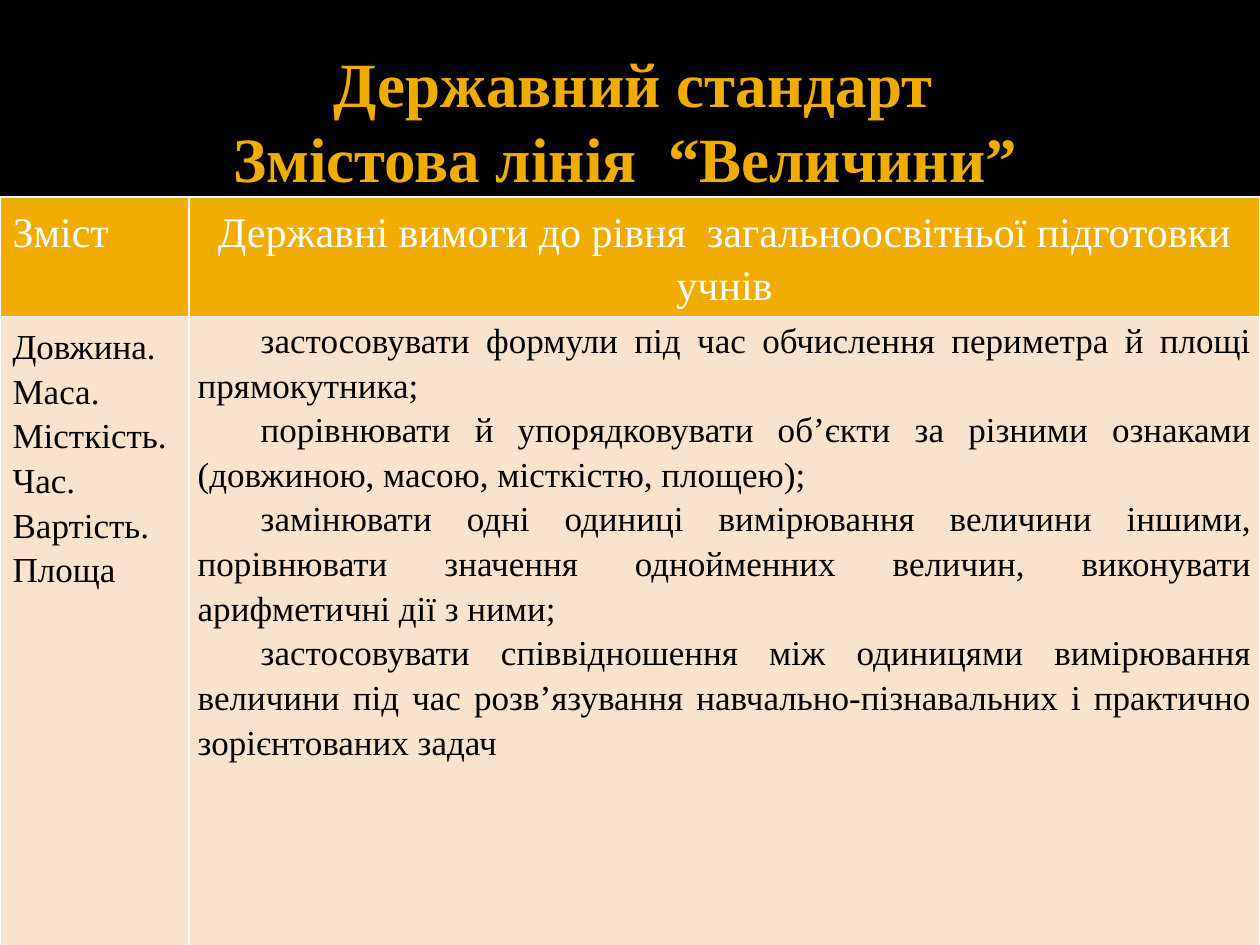
from lxml.etree import SubElement
from pptx import Presentation
from pptx.dml.color import RGBColor
from pptx.enum.shapes import MSO_SHAPE
from pptx.enum.text import MSO_ANCHOR, MSO_AUTO_SIZE, PP_ALIGN
from pptx.oxml.ns import qn
from pptx.util import Pt

BLACK = RGBColor(0x00, 0x00, 0x00)
WHITE = RGBColor(0xFF, 0xFF, 0xFF)
AMBER = RGBColor(0xF0, 0xAD, 0x00)
CREAM = RGBColor(0xF9, 0xE3, 0xCC)
FONT = "Times New Roman"

HEADINGS = ["Зміст", "Державні вимоги до рівня  загальноосвітньої підготовки учнів"]
QUANTITIES = "Довжина. Маса. Місткість. Час. Вартість. Площа"
REQUIREMENTS = [
    "застосовувати формули під час обчислення периметра й площі прямокутника; ",
    "порівнювати й упорядковувати об’єкти за різними ознаками "
    "(довжиною, масою, місткістю, площею); ",
    "замінювати одні одиниці вимірювання величини іншими, порівнювати значення "
    "однойменних величин, виконувати арифметичні дії з ними; ",
    "застосовувати співвідношення між одиницями вимірювання величини під час "
    "розв’язування навчально-пізнавальних і практично зорієнтованих задач",
]


def fill_cell(cell, lines, size, text_color, fill_color, align):
    cell.fill.solid()
    cell.fill.fore_color.rgb = fill_color
    cell.text = "\n".join(lines)
    for paragraph in cell.text_frame.paragraphs:
        paragraph.alignment = align
        paragraph.line_spacing = 1.15
        paragraph.font.name = FONT
        paragraph.font.size = Pt(size)
        paragraph.font.bold = False
        paragraph.font.color.rgb = text_color


def add_borders(cell, color, width):
    properties = cell._tc.get_or_add_tcPr()
    for position, side in enumerate(("lnL", "lnR", "lnT", "lnB")):
        border = SubElement(properties, qn(f"a:{side}"), w=str(Pt(width)))
        solid = SubElement(border, qn("a:solidFill"))
        SubElement(solid, qn("a:srgbClr"), val=str(color))
        properties.insert(position, border)  # borders come before the fill


presentation = Presentation()
presentation.slide_width = Pt(720)
presentation.slide_height = Pt(540)
slide = presentation.slides.add_slide(presentation.slide_layouts[5])

# Black header band with a white strip under it
for top, height, color in ((113, 3.6, WHITE), (0, 113, BLACK)):
    band = slide.shapes.add_shape(MSO_SHAPE.RECTANGLE, 0, Pt(top), Pt(720), Pt(height))
    band.shadow.inherit = False
    band.fill.solid()
    band.fill.fore_color.rgb = color
    band.line.fill.background()

# Title, brought in front of the band
title = slide.shapes.title
slide.shapes._spTree.append(title._element)
title.left, title.top, title.width, title.height = Pt(36), Pt(26), Pt(648), Pt(85)
heading = title.text_frame
heading.text = "Державний стандарт\vЗмістова лінія  “Величини” "
heading.word_wrap = True
heading.auto_size = MSO_AUTO_SIZE.NONE
heading.vertical_anchor = MSO_ANCHOR.MIDDLE
heading.margin_left = Pt(7.2)
heading.margin_right = heading.margin_top = heading.margin_bottom = Pt(3.6)
heading_line = heading.paragraphs[0]
heading_line.alignment = PP_ALIGN.CENTER
heading_line.font.name = FONT
heading_line.font.size = Pt(36)
heading_line.font.bold = True
heading_line.font.color.rgb = AMBER

# Table of contents and state requirements
standard = slide.shapes.add_table(2, 2, 0, Pt(112.5), Pt(720), Pt(507.6)).table
standard.columns[0].width, standard.columns[1].width = Pt(108), Pt(612)
standard.rows[0].height, standard.rows[1].height = Pt(67), Pt(440.6)

for column, align in enumerate((PP_ALIGN.JUSTIFY, PP_ALIGN.CENTER)):
    fill_cell(standard.cell(0, column), [HEADINGS[column]], 24, WHITE, AMBER, align)
fill_cell(standard.cell(1, 0), [QUANTITIES], 20, BLACK, CREAM, PP_ALIGN.JUSTIFY)

requirements_cell = standard.cell(1, 1)
fill_cell(requirements_cell, REQUIREMENTS, 20, BLACK, CREAM, PP_ALIGN.JUSTIFY)
requirements_cell.margin_left = requirements_cell.margin_right = Pt(5)
requirements_cell.margin_top = requirements_cell.margin_bottom = 0
for paragraph in requirements_cell.text_frame.paragraphs:
    indent = paragraph._p.get_or_add_pPr()
    indent.set("marL", "0")
    indent.set("indent", str(Pt(36)))

for cell in standard.iter_cells():
    add_borders(cell, WHITE, 1)

presentation.save("out.pptx")
